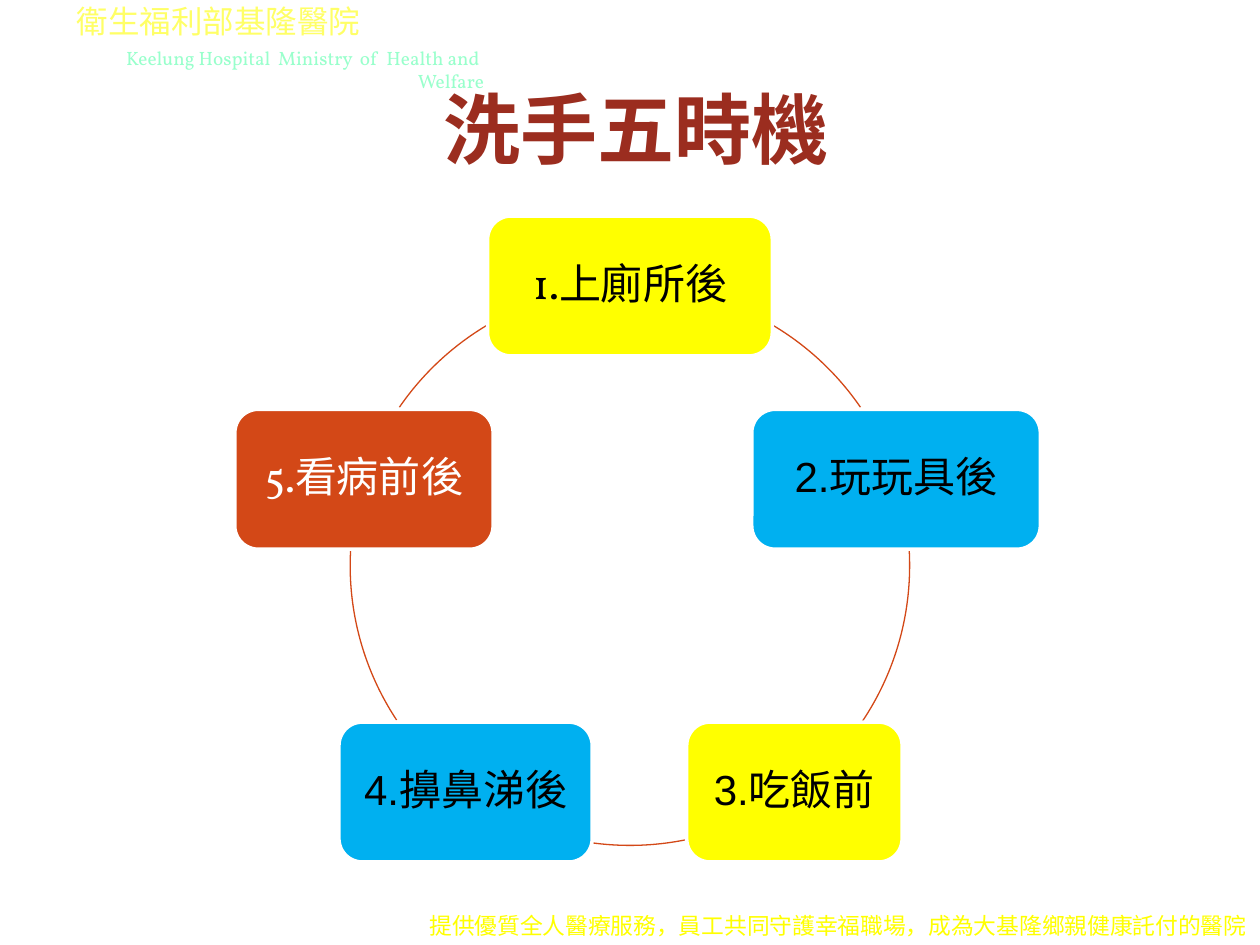
from math import cos, pi, sin

from pptx import Presentation
from pptx import util as u
from pptx.dml.color import RGBColor
from pptx.enum import shapes, text

WIDTH, HEIGHT = 10, 7.5
CENTER_X, CENTER_Y, RADIUS = WIDTH / 2, 4.49, 2.22
NODE_HEIGHT = 1.11
ORANGE, YELLOW, BLUE = "D34817", "FFFF00", "00B0F0"
LEFT, CENTER, RIGHT = text.PP_ALIGN.LEFT, text.PP_ALIGN.CENTER, text.PP_ALIGN.RIGHT
TOP, MIDDLE = text.MSO_ANCHOR.TOP, text.MSO_ANCHOR.MIDDLE

LABELS = [
    ("Keelung Hospital  Ministry  of  Health and  Welfare",
     (0.39, 0.32, 3.55, 0.29), "Vollkorn", 11, "99FFCC", RIGHT, TOP, False),
    ("衛生福利部基隆醫院",
     (0.51, -0.03, 4.72, 0.51), "Arial", 18, "FFFF66", LEFT, TOP, False),
    ("提供優質全人醫療服務，員工共同守護幸福職場，成為大基隆鄉親健康託付的醫院",
     (3.31, 7.19, 6.77, 0.32), "Vollkorn", 13, YELLOW, LEFT, TOP, False),
    ("洗手五時機",
     (0.55, 0.39, 9, 1.25), "Times New Roman", 44, "9B2D1F", CENTER, MIDDLE, True),
]

MOMENTS = [
    ("1.上廁所後", 2.26, YELLOW, "Vollkorn", "000000"),
    ("2.玩玩具後", 2.29, BLUE, "Arial", "000000"),
    ("3.吃飯前", 1.71, YELLOW, "Arial", "000000"),
    ("4.擤鼻涕後", 2.01, BLUE, "Arial", "000000"),
    ("5.看病前後", 2.05, ORANGE, "Vollkorn", "FFFFFF"),
]

ARC_DEGREES = [(300.6, 325.5), (356.9, 33.8), (78.5, 97.8), (146.5, 183.1), (214.5, 239.4)]


def color(value):
    return RGBColor.from_string(value)


def inches(bounds):
    return [u.Inches(length) for length in bounds]


def write(shape, words, font, size, ink, align, anchor, bold=False):
    frame = shape.text_frame
    frame.word_wrap = True
    frame.vertical_anchor = anchor
    para = frame.paragraphs[0]
    para.text = words
    para.alignment = align
    para.font.name = font
    para.font.size = u.Pt(size)
    para.font.bold = bold
    para.font.color.rgb = color(ink)
    return para


def add_label(page, words, bounds, *style):
    write(page.shapes.add_textbox(*inches(bounds)), words, *style)


def add_arc(page, start, end):
    bounds = (CENTER_X - RADIUS, CENTER_Y - RADIUS, 2 * RADIUS, 2 * RADIUS)
    arc = page.shapes.add_shape(shapes.MSO_SHAPE.ARC, *inches(bounds))
    arc.shadow.inherit = False
    arc.fill.background()
    arc.line.color.rgb = color(ORANGE)
    arc.line.width = u.Pt(0.75)
    for index, degrees in enumerate((start, end)):
        arc.adjustments[index] = degrees * 60000 / 100000


def add_moment(page, index, words, width, fill, font, ink):
    angle = 2 * pi * index / len(MOMENTS)
    left = CENTER_X + RADIUS * sin(angle) - width / 2
    top = CENTER_Y - RADIUS * cos(angle) - NODE_HEIGHT / 2
    box = page.shapes.add_shape(
        shapes.MSO_SHAPE.ROUNDED_RECTANGLE, *inches((left, top, width, NODE_HEIGHT)))
    box.shadow.inherit = False
    box.fill.solid()
    box.fill.fore_color.rgb = color(fill)
    box.line.color.rgb = color("FFFFFF")
    box.line.width = u.Pt(2)
    para = write(box, words, font, 24, ink, CENTER, MIDDLE)
    para.line_spacing = 0.9


def main():
    deck = Presentation()
    deck.slide_width, deck.slide_height = inches((WIDTH, HEIGHT))
    page = deck.slides.add_slide(deck.slide_layouts[6])
    for label in LABELS:
        add_label(page, *label)
    for start, end in ARC_DEGREES:
        add_arc(page, start, end)
    for index, moment in enumerate(MOMENTS):
        add_moment(page, index, *moment)
    deck.save("out.pptx")


if __name__ == "__main__":
    main()
